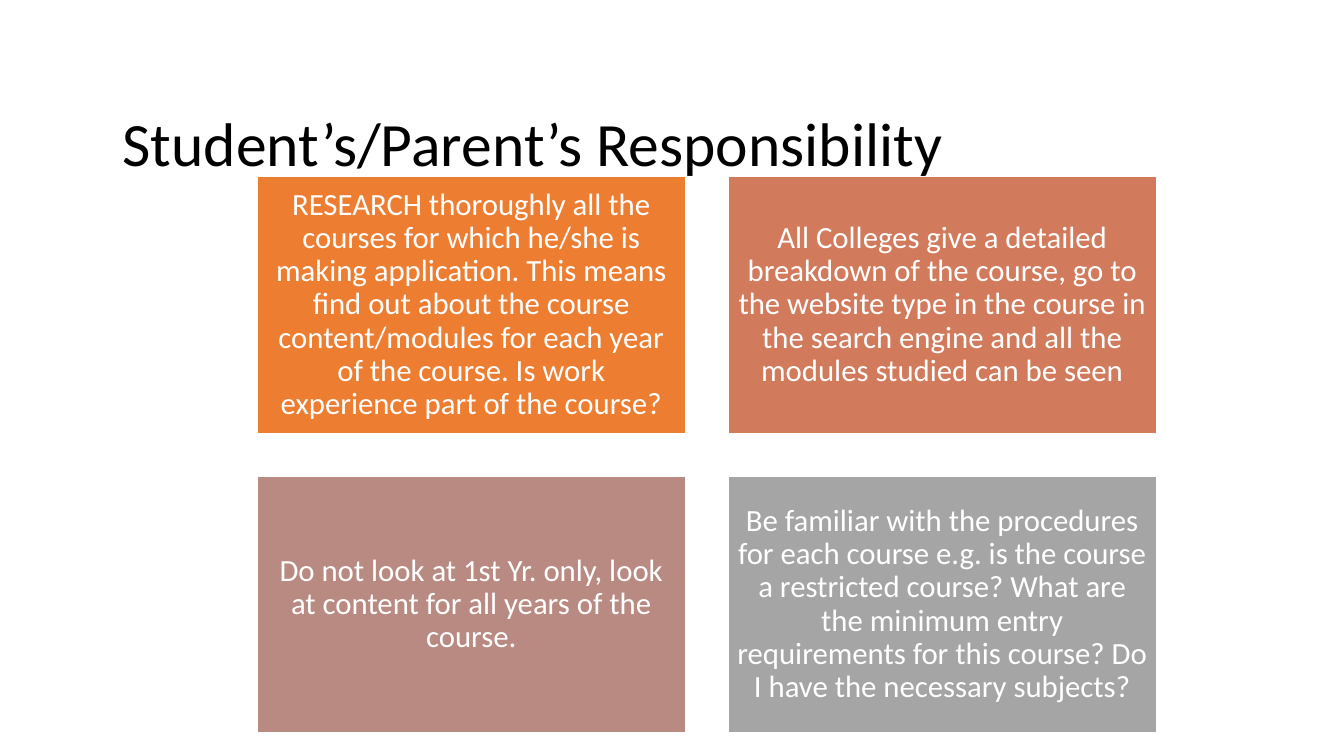
from pptx import Presentation
from pptx.dml.color import RGBColor
from pptx.enum.shapes import MSO_SHAPE as Shape
from pptx.enum.text import MSO_ANCHOR as Anchor, PP_ALIGN as Align
from pptx.util import Pt

TITLE = "Student’s/Parent’s Responsibility"
CARDS = [
    ("RESEARCH thoroughly all the courses for which he/she is making application. "
     "This means find out about the course content/modules for each year of the course. "
     "Is work experience part of the course?", "orange"),
    ("All Colleges give a detailed breakdown of the course, go to the website type in "
     "the course in the search engine and all the modules studied can be seen", "terracotta"),
    ("Do not look at 1st Yr. only, look at content for all years of the course.", "rose"),
    ("Be familiar with the procedures for each course e.g. is the course a restricted "
     "course? What are the minimum entry requirements for this course? "
     "Do I have the necessary subjects?", "gray"),
]
COLORS = {"black": "000000", "white": "FFFFFF", "orange": "ED7D31",
          "terracotta": "D17B5C", "rose": "B98A82", "gray": "A5A5A5"}
FONT = "Calibri"
COLUMNS = 2
GRID_LEFT, GRID_TOP = 183.6, 126
CARD_WIDTH, CARD_HEIGHT, GAP = 306, 183.6, 30.4
CARD_INSET = 6.6


def color(name):
    return RGBColor.from_string(COLORS[name])


def write(shape, text, size, color_name, align):
    frame = shape.text_frame
    frame.word_wrap = True
    frame.vertical_anchor = Anchor.MIDDLE
    frame.text = text
    paragraph = frame.paragraphs[0]
    paragraph.alignment = align
    paragraph.line_spacing = 0.9
    font = paragraph.runs[0].font
    font.name, font.size = FONT, Pt(size)
    font.color.rgb = color(color_name)


def add_title(slide):
    box = slide.shapes.add_textbox(Pt(80.6), Pt(46), Pt(765.4), Pt(118))
    write(box, TITLE, 44, "black", Align.LEFT)


def add_card(slide, index, text, fill):
    row, column = divmod(index, COLUMNS)
    left = GRID_LEFT + column * (CARD_WIDTH + GAP)
    top = GRID_TOP + row * (CARD_HEIGHT + GAP)
    card = slide.shapes.add_shape(Shape.RECTANGLE, Pt(left), Pt(top),
                                  Pt(CARD_WIDTH), Pt(CARD_HEIGHT))
    card.shadow.inherit = False
    card.fill.solid()
    card.fill.fore_color.rgb = color(fill)
    card.line.color.rgb = color("white")
    card.line.width = Pt(1)
    frame = card.text_frame
    frame.margin_left = frame.margin_right = Pt(CARD_INSET)
    frame.margin_top = frame.margin_bottom = Pt(CARD_INSET)
    write(card, text, 22, "white", Align.CENTER)


def main():
    """Build the slide on student and parent responsibility."""
    presentation = Presentation()
    presentation.slide_width, presentation.slide_height = Pt(960), Pt(540)
    slide = presentation.slides.add_slide(presentation.slide_layouts[6])
    add_title(slide)
    for index, (text, fill) in enumerate(CARDS):
        add_card(slide, index, text, fill)
    presentation.save("out.pptx")


if __name__ == "__main__":
    main()
